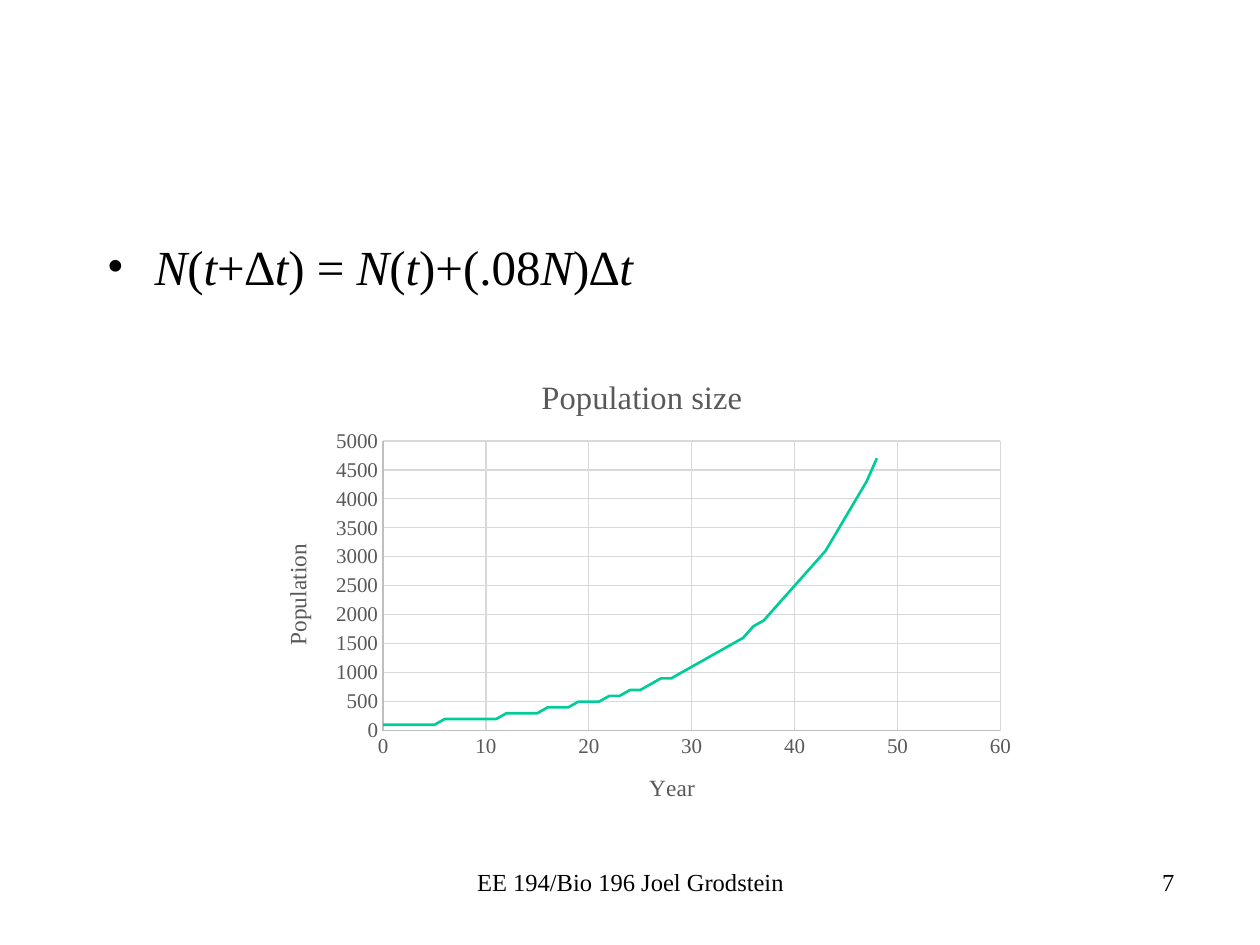
from math import exp

from lxml.etree import SubElement
from pptx import Presentation
from pptx.chart.data import XyChartData
from pptx.dml.color import RGBColor
from pptx.enum.chart import XL_CHART_TYPE, XL_MARKER_STYLE, XL_TICK_MARK
from pptx.enum.text import PP_ALIGN
from pptx.oxml import parse_xml
from pptx.oxml.ns import nsdecls, qn
from pptx.util import Inches, Pt

FONT = "Times New Roman"
BLACK = RGBColor(0x00, 0x00, 0x00)
GRAY = RGBColor(0x59, 0x59, 0x59)
AXIS_GRAY = RGBColor(0xBF, 0xBF, 0xBF)
GRID_GRAY = RGBColor(0xD9, 0xD9, 0xD9)
GREEN = RGBColor(0x00, 0xCC, 0x99)

START_POPULATION = 100
GROWTH_RATE = 0.08
LAST_YEAR = 48


def format_font(font, size, color=BLACK, italic=False):
    """Set the typeface, size, colour and slant of a font."""
    font.name = FONT
    font.size = Pt(size)
    font.color.rgb = color
    font.bold = False
    font.italic = italic


def add_run(paragraph, text, **style):
    """Append formatted text to a paragraph."""
    run = paragraph.add_run()
    run.text = text
    format_font(run.font, **style)


def add_text_box(slide, box, alignment=PP_ALIGN.LEFT):
    """Add a wrapping text box and return its first paragraph."""
    frame = slide.shapes.add_textbox(*map(Inches, box)).text_frame
    frame.word_wrap = True
    paragraph = frame.paragraphs[0]
    paragraph.alignment = alignment
    return paragraph


def add_formula(slide, box):
    """Add the bulleted growth formula with italic variables."""
    paragraph = add_text_box(slide, box)
    paragraph.space_before = Pt(6)
    properties = paragraph._p.get_or_add_pPr()
    properties.set("marL", str(Inches(0.38)))
    properties.set("indent", str(-Inches(0.38)))
    SubElement(properties, qn("a:buFont")).set("typeface", FONT)
    SubElement(properties, qn("a:buChar")).set("char", "•")
    pieces = ["N", "(", "t", "+∆", "t", ") =", " N", "(", "t", ")+(.08", "N", ")∆", "t"]
    for index, piece in enumerate(pieces):
        add_run(paragraph, piece, size=28, italic=index % 2 == 0)


def add_footer(slide, box, text, alignment):
    """Add one line of footer text."""
    add_run(add_text_box(slide, box, alignment), text, size=14)


def add_chart_title(owner, text, size, chart_size, place):
    """Title a chart or axis at a place inside the chart area."""
    owner.has_title = True
    title = owner.chart_title if hasattr(owner, "chart_title") else owner.axis_title
    add_run(title.text_frame.paragraphs[0], text, size=size, color=GRAY)
    set_layout(title._element, chart_size, place)


def set_layout(element, chart_size, place, inner_size=()):
    """Place a chart part by lengths measured inside the chart area."""
    for old_layout in element.findall(qn("c:layout")):
        element.remove(old_layout)
    target = '<c:layoutTarget val="inner"/>' if inner_size else ""
    lengths = zip("xywh", (*place, *inner_size), chart_size * 2)
    values = "".join(
        f'<c:{name} val="{Inches(length) / Inches(whole)}"/>'
        for name, length, whole in lengths
    )
    layout = parse_xml(
        f'<c:layout {nsdecls("c")}><c:manualLayout>{target}<c:xMode val="edge"/>'
        f'<c:yMode val="edge"/>{values}</c:manualLayout></c:layout>'
    )
    text = element.find(qn("c:tx"))
    element.insert(0 if text is None else element.index(text) + 1, layout)


def format_axis(axis, maximum, step):
    """Set the scale, labels, line and grid of an axis."""
    axis.minimum_scale = 0
    axis.maximum_scale = maximum
    axis.major_unit = step
    axis.major_tick_mark = axis.minor_tick_mark = XL_TICK_MARK.NONE
    axis.has_major_gridlines = True
    format_font(axis.tick_labels.font, 12, GRAY)
    for line, color in (
        (axis.format.line, AXIS_GRAY),
        (axis.major_gridlines.format.line, GRID_GRAY),
    ):
        line.color.rgb = color
        line.width = Pt(0.75)


def add_population_chart(slide, box):
    """Add the smooth curve of population by year."""
    data = XyChartData()
    points = data.add_series("Series 1")
    for year in range(LAST_YEAR + 1):
        points.add_data_point(year, round(START_POPULATION * exp(GROWTH_RATE * year), -2))
    chart = slide.shapes.add_chart(
        XL_CHART_TYPE.XY_SCATTER_SMOOTH_NO_MARKERS, *map(Inches, box), data
    ).chart
    format_font(chart.font, 10)
    chart.has_legend = False
    plot = chart.plots[0]
    plot.vary_by_categories = False
    series = plot.series[0]
    series.smooth = True
    series.marker.style = XL_MARKER_STYLE.NONE
    series.format.line.color.rgb = GREEN
    series.format.line.width = Pt(1.5)
    format_axis(chart.category_axis, 60, 10)
    format_axis(chart.value_axis, 5000, 500)
    chart_size = box[2:]
    add_chart_title(chart, "Population size", 18.6, chart_size, (2.2, 0.11))
    add_chart_title(chart.category_axis, "Year", 13.3, chart_size, (3.07, 3.27))
    add_chart_title(chart.value_axis, "Population", 13.3, chart_size, (0.16, 1.45))
    plot_area = chart._chartSpace.chart.plotArea
    set_layout(plot_area, chart_size, (0.99, 0.67), (4.9, 2.3))


def main():
    """Build and save the population growth slide."""
    presentation = Presentation()
    presentation.slide_width = Inches(10)
    presentation.slide_height = Inches(7.5)
    slide = presentation.slides.add_slide(presentation.slide_layouts[6])
    add_footer(slide, (6.25, 6.83, 3.17, 0.5), "7", PP_ALIGN.RIGHT)
    add_formula(slide, (0.75, 1.83, 8.5, 0.68))
    add_footer(slide, (3.42, 6.83, 3.17, 0.5), "EE 194/Bio 196 Joel Grodstein", PP_ALIGN.CENTER)
    add_population_chart(slide, (2.05, 2.83, 6.09, 3.75))
    presentation.save("out.pptx")


if __name__ == "__main__":
    main()
